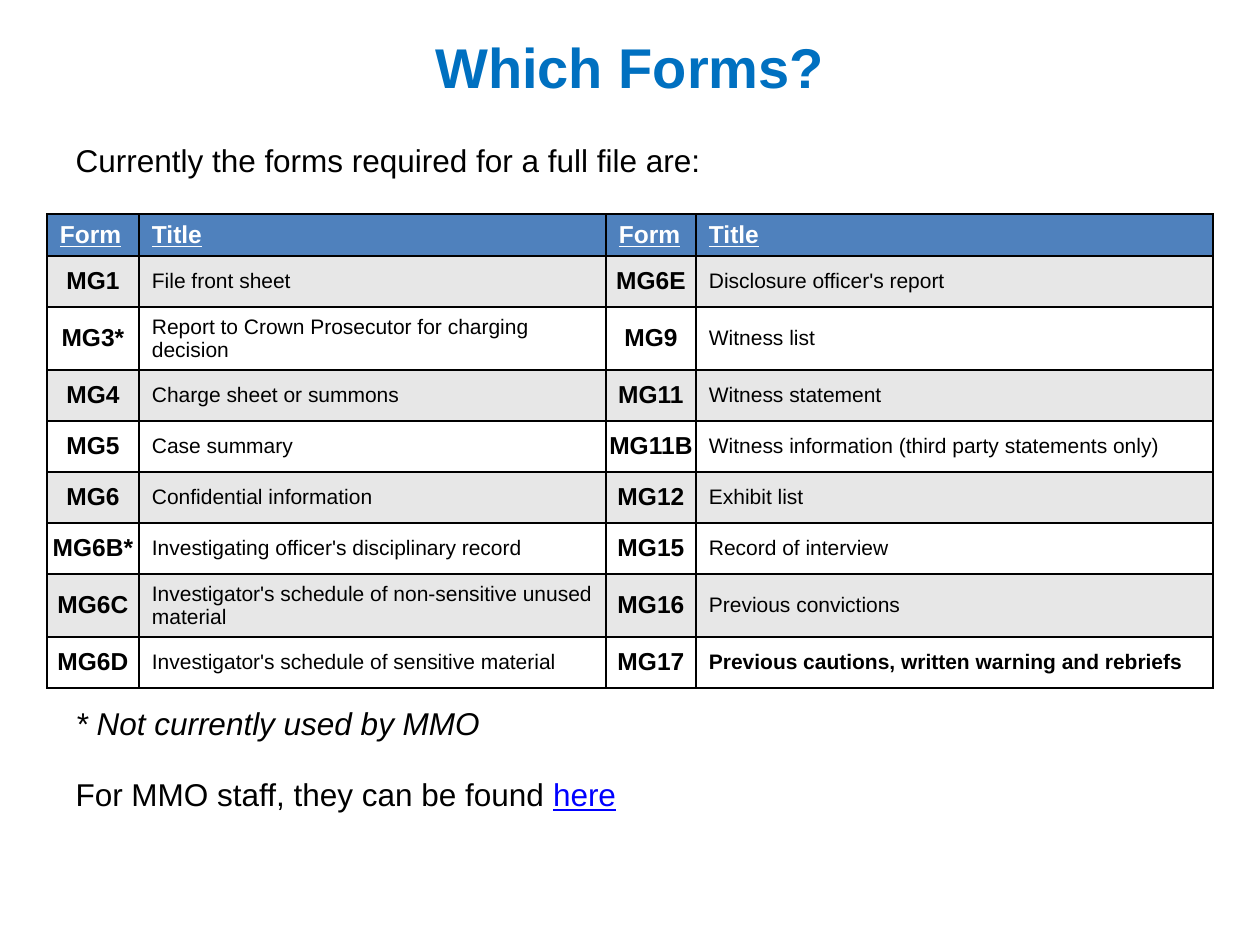
from dataclasses import dataclass

from lxml.etree import SubElement
from pptx import Presentation
from pptx.dml.color import RGBColor
from pptx.enum.text import MSO_ANCHOR, MSO_AUTO_SIZE, PP_ALIGN
from pptx.oxml.ns import qn
from pptx.util import Emu, Pt

PX = 914400 / 126  # EMU in one px

BLACK = RGBColor(0x00, 0x00, 0x00)
WHITE = RGBColor(0xFF, 0xFF, 0xFF)
TITLE_BLUE = RGBColor(0x00, 0x70, 0xC0)
HEADER_BLUE = RGBColor(0x4F, 0x81, 0xBD)
BAND_GREY = RGBColor(0xE7, 0xE7, 0xE7)
LINK_BLUE = RGBColor(0x00, 0x00, 0xFF)

COLUMN_WIDTHS = (92, 467, 90, 517)
HEADER_HEIGHT, ROW_HEIGHT, TALL_ROW_HEIGHT = 42, 51, 63


@dataclass(frozen=True)
class Form:
    code: str
    title: str
    bold: bool = False


@dataclass(frozen=True)
class CellStyle:
    size: int
    bold: bool
    color: RGBColor
    fill: RGBColor
    underline: bool = False
    align: PP_ALIGN = PP_ALIGN.LEFT
    margin_x: int = 13
    margin_y: int = 6


LEFT_FORMS = (
    Form("MG1", "File front sheet"),
    Form("MG3*", "Report to Crown Prosecutor for charging decision"),
    Form("MG4", "Charge sheet or summons"),
    Form("MG5", "Case summary"),
    Form("MG6", "Confidential information"),
    Form("MG6B*", "Investigating officer's disciplinary record"),
    Form("MG6C", "Investigator's schedule of non-sensitive unused material"),
    Form("MG6D", "Investigator's schedule of sensitive material"),
)
RIGHT_FORMS = (
    Form("MG6E", "Disclosure officer's report"),
    Form("MG9", "Witness list"),
    Form("MG11", "Witness statement"),
    Form("MG11B", "Witness information (third party statements only)"),
    Form("MG12", "Exhibit list"),
    Form("MG15", "Record of interview"),
    Form("MG16", "Previous convictions"),
    Form("MG17", "Previous cautions, written warning and rebriefs", bold=True),
)
TWO_LINE_ROWS = (2, 7)


def px(length: int) -> Emu:
    return Emu(round(length * PX))


def place(shape, left: int, top: int, width: int, height: int) -> None:
    shape.left, shape.top = px(left), px(top)
    shape.width, shape.height = px(width), px(height)


def set_font(font, size: int, color: RGBColor, bold: bool = False) -> None:
    font.name, font.size, font.bold = "Arial", Pt(size), bold
    font.color.rgb = color


def add_line(frame, text: str, gap: int = 0):
    """Add an unbulleted body line, with a gap in px above it."""
    line = frame.add_paragraph() if gap else frame.paragraphs[0]
    properties = line._p.get_or_add_pPr()
    properties.set("marL", "0")
    properties.set("indent", "0")
    SubElement(properties, qn("a:buNone"))
    line.space_before = px(gap)
    set_font(line.font, 18, BLACK)
    line.add_run().text = text
    return line


def add_borders(cell) -> None:
    properties = cell._tc.get_or_add_tcPr()
    for side in ("a:lnL", "a:lnR", "a:lnT", "a:lnB"):
        border = SubElement(properties, qn(side), w=str(Pt(1)))
        fill = SubElement(border, qn("a:solidFill"))
        SubElement(fill, qn("a:srgbClr"), val=str(BLACK))


def fill_cell(cell, text: str, style: CellStyle) -> None:
    add_borders(cell)
    cell.fill.solid()
    cell.fill.fore_color.rgb = style.fill
    cell.vertical_anchor = MSO_ANCHOR.MIDDLE
    cell.margin_left = cell.margin_right = px(style.margin_x)
    cell.margin_top = cell.margin_bottom = px(style.margin_y)
    cell.text = text
    paragraph = cell.text_frame.paragraphs[0]
    paragraph.alignment = style.align
    set_font(paragraph.font, style.size, style.color, style.bold)
    paragraph.font.underline = style.underline


def add_forms_table(slide) -> None:
    frame = slide.shapes.add_table(
        len(LEFT_FORMS) + 1, len(COLUMN_WIDTHS), px(47), px(214),
        px(sum(COLUMN_WIDTHS)), px(474))
    table = frame.table
    table.first_row = table.horz_banding = False
    for column, width in zip(table.columns, COLUMN_WIDTHS):
        column.width = px(width)
    for number, row in enumerate(table.rows):
        row.height = px(TALL_ROW_HEIGHT if number in TWO_LINE_ROWS else ROW_HEIGHT)
    table.rows[0].height = px(HEADER_HEIGHT)

    header = CellStyle(14, True, WHITE, HEADER_BLUE, underline=True)
    for column, heading in enumerate(("Form", "Title") * 2):
        fill_cell(table.cell(0, column), heading, header)

    for row, pair in enumerate(zip(LEFT_FORMS, RIGHT_FORMS), start=1):
        band = BAND_GREY if row % 2 else WHITE
        code = CellStyle(14, True, BLACK, band, align=PP_ALIGN.CENTER,
                         margin_x=1, margin_y=1)
        for side, form in enumerate(pair):
            fill_cell(table.cell(row, 2 * side), form.code, code)
            fill_cell(table.cell(row, 2 * side + 1), form.title,
                      CellStyle(12, form.bold, BLACK, band))


def main() -> None:
    deck = Presentation()
    deck.slide_width, deck.slide_height = px(1260), px(945)
    slide = deck.slides.add_slide(deck.slide_layouts[1])

    # Title
    title = slide.shapes.title
    place(title, 63, 18, 1134, 97)
    title.text_frame.text = "Which Forms?"
    title.text_frame.auto_size = MSO_AUTO_SIZE.NONE
    title.text_frame.vertical_anchor = MSO_ANCHOR.MIDDLE
    heading = title.text_frame.paragraphs[0]
    heading.alignment = PP_ALIGN.CENTER
    set_font(heading.font, 32, TITLE_BLUE, bold=True)

    # Body lines above and below the table
    body = slide.placeholders[1]
    place(body, 63, 135, 1134, 764)
    body.text_frame.auto_size = MSO_AUTO_SIZE.NONE
    add_line(body.text_frame, "Currently the forms required for a full file are:")
    footnote = add_line(body.text_frame, "* Not currently used by MMO", gap=525)
    footnote.font.italic = True
    staff_note = add_line(body.text_frame, "For MMO staff, they can be found ", gap=33)
    here = staff_note.add_run()
    here.text = "here"
    here.font.color.rgb = LINK_BLUE
    here.font.underline = True

    # Table of forms
    add_forms_table(slide)

    deck.save("out.pptx")


if __name__ == "__main__":
    main()
